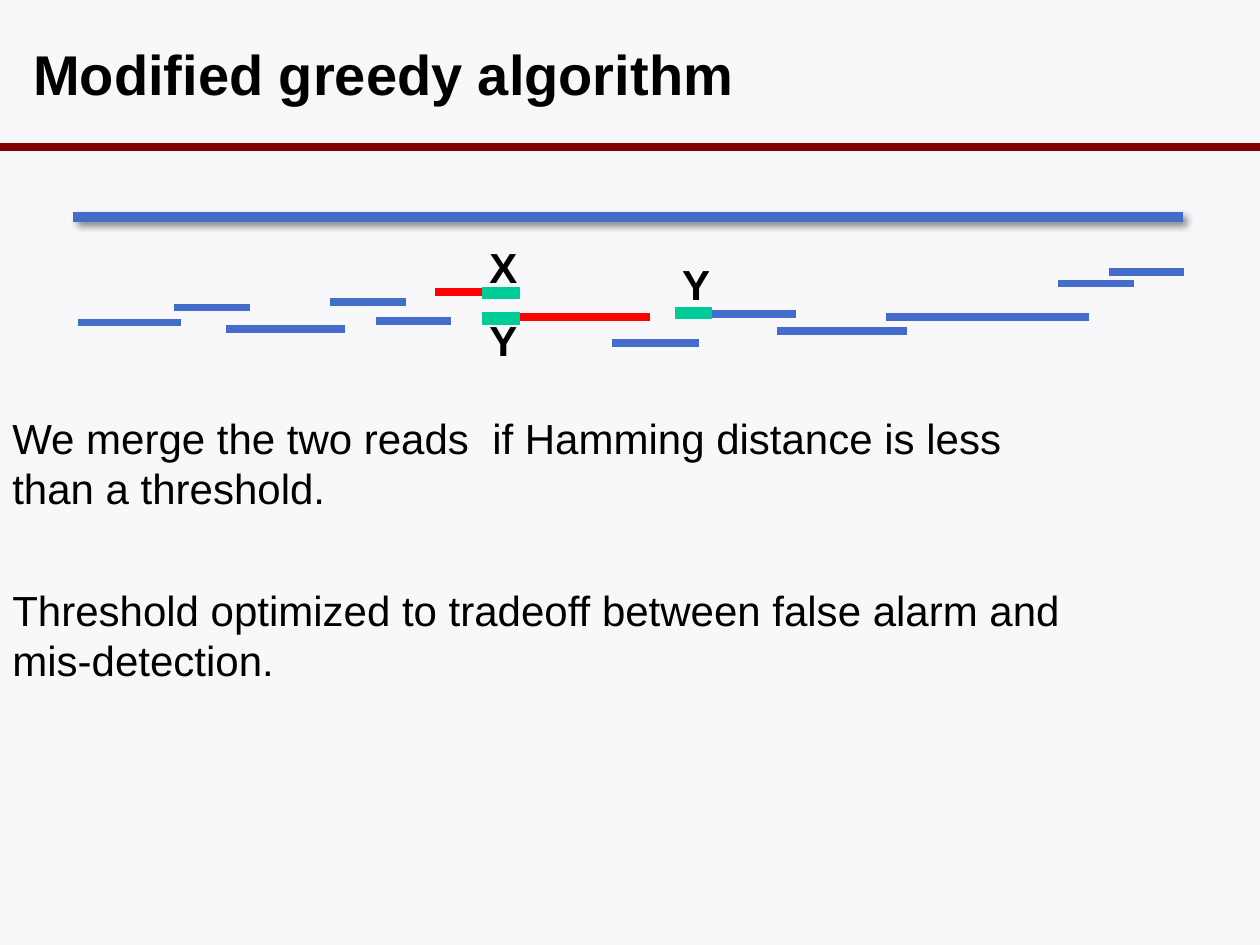
from collections import namedtuple
from dataclasses import dataclass

from lxml.etree import SubElement
from pptx import Presentation
from pptx.dml.color import RGBColor as Rgb
from pptx.enum.shapes import MSO_CONNECTOR as Connector, MSO_SHAPE as Shape
from pptx.enum.text import MSO_ANCHOR as Anchor, PP_ALIGN as Align
from pptx.oxml.ns import qn
from pptx.util import Pt

Box = namedtuple("Box", "left top width height")


@dataclass(frozen=True)
class Theme:
    font: str = "Arial"
    background: Rgb = Rgb(0xF8, 0xF8, 0xFA)
    text: Rgb = Rgb(0, 0, 0)
    rule: Rgb = Rgb(0x80, 0, 0)
    read: Rgb = Rgb(0x44, 0x6D, 0xCB)
    merged: Rgb = Rgb(0xFF, 0, 0)
    overlap: Rgb = Rgb(0, 0xCC, 0x99)
    title_size: int = 32
    body_size: int = 24
    read_width: float = 4.5
    genome_width: float = 6


THEME = Theme()

# Reads as (x, y, length), relative to the left end of the genome
READS = [
    (57.4, 51.7, 43.2), (86.9, 63.9, 68.4), (146.6, 48.8, 43.2),
    (343.9, 55.3, 69.1), (464.2, 57.4, 115.9), (562.8, 38, 43.2),
    (591.6, 31.5, 43.2), (307.9, 71.8, 49.7), (172.6, 59.6, 43.2),
    (402.2, 65.4, 74.2), (2.6, 60.3, 59),
]
MERGED_READS = [(233.8, 57.4, 95.8), (206.4, 43, 45.4)]
# Overlaps as (label, x, y, top of label)
OVERLAPS = [
    ("Y", 233.8, 54.6, 52.4), ("X", 233.8, 40.2, 10.6),
    ("Y", 343.9, 51.7, 20),
]
OVERLAP_WIDTH, OVERLAP_HEIGHT = 20.9, 6.5
LABEL_WIDTH, LABEL_HEIGHT = 27.4, 36


def add_line(page, x, y, length, color, width, shadow=False):
    line = page.shapes.add_connector(
        Connector.STRAIGHT, Pt(x), Pt(y), Pt(x + length), Pt(y))
    line.line.color.rgb = color
    line.line.width = Pt(width)
    effects = SubElement(line._element.spPr, qn("a:effectLst"))
    if shadow:
        outer = SubElement(
            effects, qn("a:outerShdw"), blurRad=str(Pt(4)), dist=str(Pt(3)),
            dir="2700000", algn="tl", rotWithShape="0")
        black = SubElement(outer, qn("a:srgbClr"), val="000000")
        SubElement(black, qn("a:alpha"), val="43000")


def add_text(page, box, lines, size, bold=False, align=Align.LEFT,
             anchor=Anchor.TOP, wrap=True):
    frame = page.shapes.add_textbox(*map(Pt, box)).text_frame
    frame.word_wrap = wrap
    frame.vertical_anchor = anchor
    frame.text = "\n".join(lines)
    for para in frame.paragraphs:
        para.alignment = align
        para.font.name = THEME.font
        para.font.size = Pt(size)
        para.font.bold = bold
        para.font.color.rgb = THEME.text


def add_header(page, box):
    add_line(page, box.left, box.top + box.height, box.width,
             THEME.rule, THEME.read_width)
    title = Box(box.left + 12, box.top + 12, 612, 60)
    add_text(page, title, ["Modified greedy algorithm"], THEME.title_size,
             bold=True, anchor=Anchor.MIDDLE)


def add_assembly(page, box):
    # Genome above its reads
    add_line(page, box.left, box.top, box.width,
             THEME.read, THEME.genome_width, shadow=True)
    for reads, color in ((READS, THEME.read), (MERGED_READS, THEME.merged)):
        for x, y, length in reads:
            add_line(page, box.left + x, box.top + y, length,
                     color, THEME.read_width)

    # Labelled overlaps
    for label, x, y, label_top in OVERLAPS:
        left = box.left + x
        overlap = page.shapes.add_shape(
            Shape.RECTANGLE, Pt(left), Pt(box.top + y),
            Pt(OVERLAP_WIDTH), Pt(OVERLAP_HEIGHT))
        overlap.shadow.inherit = False
        overlap.fill.solid()
        overlap.fill.fore_color.rgb = THEME.overlap
        overlap.line.color.rgb = THEME.overlap
        overlap.line.width = Pt(0.75)
        label_left = left + (OVERLAP_WIDTH - LABEL_WIDTH) / 2
        add_text(page,
                 Box(label_left, box.top + label_top, LABEL_WIDTH, LABEL_HEIGHT),
                 [label], THEME.body_size, bold=True, align=Align.CENTER)


def add_notes_on_merging(page, box):
    merge = ["We merge the two reads  if Hamming distance is less",
             "than a threshold."]
    tradeoff = ["Threshold optimized to tradeoff between false alarm and",
                "mis-detection."]
    height = 65.5
    add_text(page, Box(box.left, box.top, 592, height),
             merge, THEME.body_size, wrap=False)
    add_text(page, Box(box.left, box.top + box.height - height, 626, height),
             tradeoff, THEME.body_size, wrap=False)


def main():
    deck = Presentation()
    deck.slide_width, deck.slide_height = Pt(720), Pt(540)
    page = deck.slides.add_slide(deck.slide_layouts[6])
    page.background.fill.solid()
    page.background.fill.fore_color.rgb = THEME.background

    add_header(page, Box(0, 0, 720, 84))
    add_assembly(page, Box(42, 124, 634, 80))
    add_notes_on_merging(page, Box(0, 232, 626, 164))
    deck.save("out.pptx")


if __name__ == "__main__":
    main()
